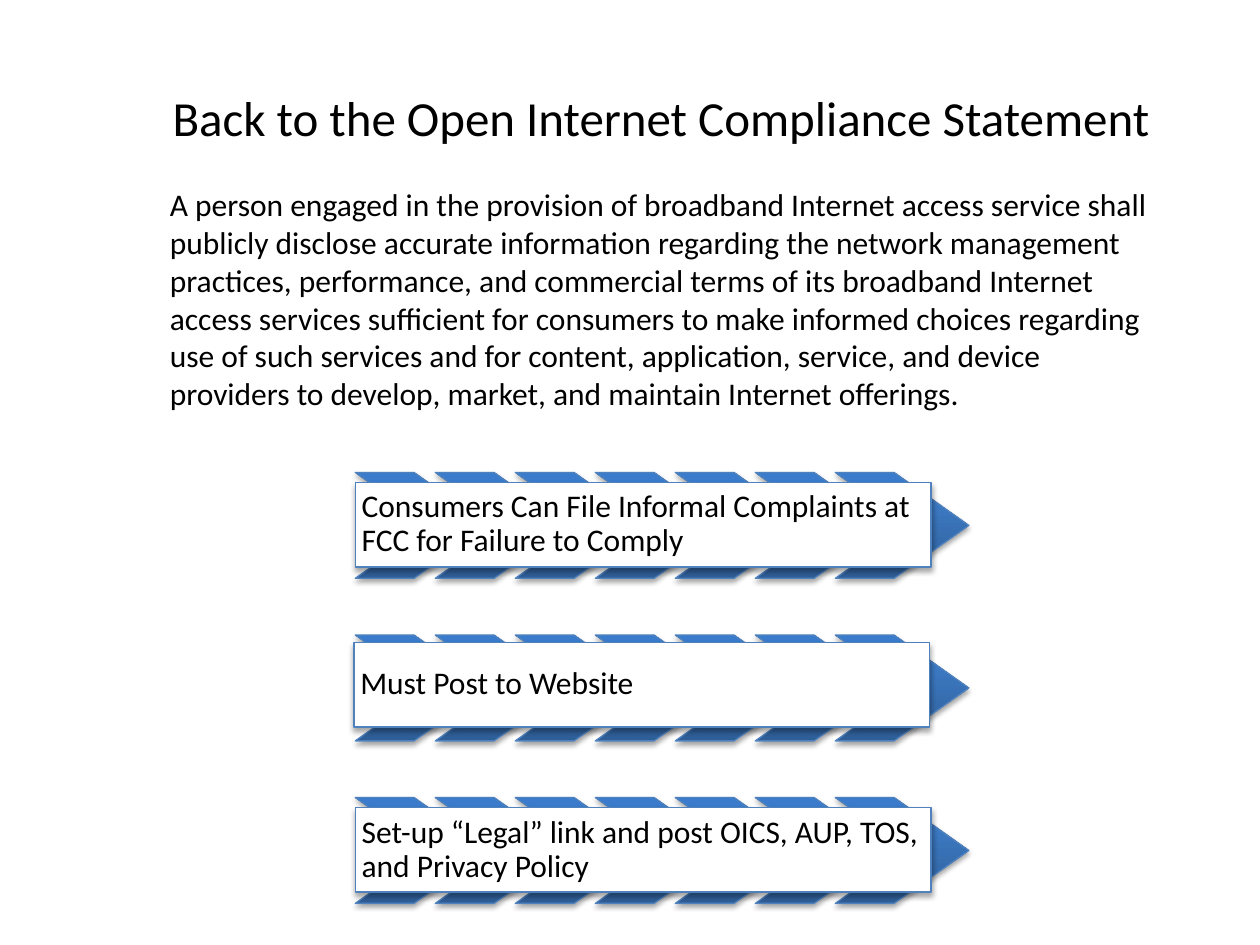
from copy import deepcopy
from dataclasses import dataclass

from lxml import etree
from pptx import Presentation
from pptx import util as u
from pptx.dml.color import RGBColor
from pptx.enum import shapes, text
from pptx.oxml.ns import qn

FONT = "Calibri"
BLACK, WHITE, BLUE = "000000", "FFFFFF", "4F81BD"
GRADIENT = [(0, "2F5F99"), (0.8, "3D7CC7"), (1, "3A7CCB")]
CHEVRONS = 7
CHEVRON_LEFT, CHEVRON_STEP = 2.82, 0.635
CHEVRON_W, CHEVRON_H = 1.06, 0.84
ROW_TOP, ROW_STEP = 3.75, 1.29
LABEL_W, LABEL_H = 4.57, 0.67


@dataclass
class Label:
    left: float
    top: float
    words: str


LABELS = [
    Label(2.82, 3.83, "Consumers Can File Informal Complaints at FCC for Failure to Comply"),
    Label(2.81, 5.10, "Must Post to Website"),
    Label(2.82, 6.41, "Set-up “Legal” link and post OICS, AUP, TOS, and Privacy Policy"),
]

TITLE = "Back to the Open Internet Compliance Statement"
RULE = (
    "A person engaged in the provision of broadband Internet access service shall "
    "publicly disclose accurate information regarding the network management "
    "practices, performance, and commercial terms of its broadband Internet access "
    "services sufficient for consumers to make informed choices regarding use of "
    "such services and for content, application, service, and device providers to "
    "develop, market, and maintain Internet offerings."
)


def rgb(value: str) -> RGBColor:
    return RGBColor.from_string(value)


def set_all(target, values: dict) -> None:
    for name, value in values.items():
        setattr(target, name, value)


def write(sp, words: str, size: float, frame: dict, para: dict) -> None:
    tf = sp.text_frame
    set_all(tf, {"word_wrap": True, **frame})
    p = tf.paragraphs[0]
    set_all(p, para)
    r = p.add_run()
    r.text = words
    set_all(r.font, {"name": FONT, "size": u.Pt(size)})
    r.font.color.rgb = rgb(BLACK)


def add_text(s, box: tuple, words: str, size: float, frame: dict, para: dict) -> None:
    sp = s.shapes.add_textbox(*map(u.Inches, box))
    write(sp, words, size, frame, para)


def add_shadow(sp) -> None:
    sp.shadow.inherit = False
    effects = sp._element.spPr.find(qn("a:effectLst"))
    shadow = etree.SubElement(
        effects, qn("a:outerShdw"),
        blurRad=str(u.Pt(3.1)), dist=str(u.Pt(1.8)), dir="5400000", rotWithShape="0",
    )
    color = etree.SubElement(shadow, qn("a:srgbClr"), val=BLACK)
    etree.SubElement(color, qn("a:alpha"), val="35000")


def add_outlined(s, kind, box: tuple):
    sp = s.shapes.add_shape(kind, *map(u.Inches, box))
    sp.line.color.rgb = rgb(BLUE)
    sp.line.width = u.Pt(0.75)
    return sp


def add_chevron(s, left: float, top: float) -> None:
    sp = add_outlined(s, shapes.MSO_SHAPE.CHEVRON, (left, top, CHEVRON_W, CHEVRON_H))
    sp.adjustments[0] = 0.706
    sp.fill.gradient()
    sp.fill.gradient_angle = 90
    stops = next(sp._element.spPr.iter(qn("a:gsLst")))
    stops.append(deepcopy(stops[0]))
    for stop, (position, color) in zip(sp.fill.gradient_stops, GRADIENT):
        stop.position = position
        stop.color.rgb = rgb(color)
    add_shadow(sp)


def add_label(s, label: Label) -> None:
    box = (label.left, label.top, LABEL_W, LABEL_H)
    sp = add_outlined(s, shapes.MSO_SHAPE.RECTANGLE, box)
    sp.fill.solid()
    sp.fill.fore_color.rgb = rgb(WHITE)
    add_shadow(sp)
    margins = {f"margin_{side}": u.Inches(0.05) for side in ("left", "top", "right", "bottom")}
    write(
        sp, label.words, 18,
        {"vertical_anchor": text.MSO_ANCHOR.MIDDLE, **margins},
        {"alignment": text.PP_ALIGN.LEFT, "line_spacing": 0.9},
    )


def main() -> None:
    prs = Presentation()
    set_all(prs, {"slide_width": u.Inches(10), "slide_height": u.Inches(7.5)})
    s = prs.slides.add_slide(prs.slide_layouts[6])
    add_text(
        s, (0.83, 0.3, 8.83, 1.25), TITLE, 28,
        {"vertical_anchor": text.MSO_ANCHOR.MIDDLE},
        {"alignment": text.PP_ALIGN.CENTER},
    )
    add_text(
        s, (1.25, 1.42, 8, 1.92), RULE, 18,
        {"auto_size": text.MSO_AUTO_SIZE.SHAPE_TO_FIT_TEXT},
        {"alignment": text.PP_ALIGN.LEFT},
    )
    for row, label in enumerate(LABELS):
        for col in range(CHEVRONS):
            add_chevron(s, CHEVRON_LEFT + col * CHEVRON_STEP, ROW_TOP + row * ROW_STEP)
        add_label(s, label)
    prs.save("out.pptx")


if __name__ == "__main__":
    main()
